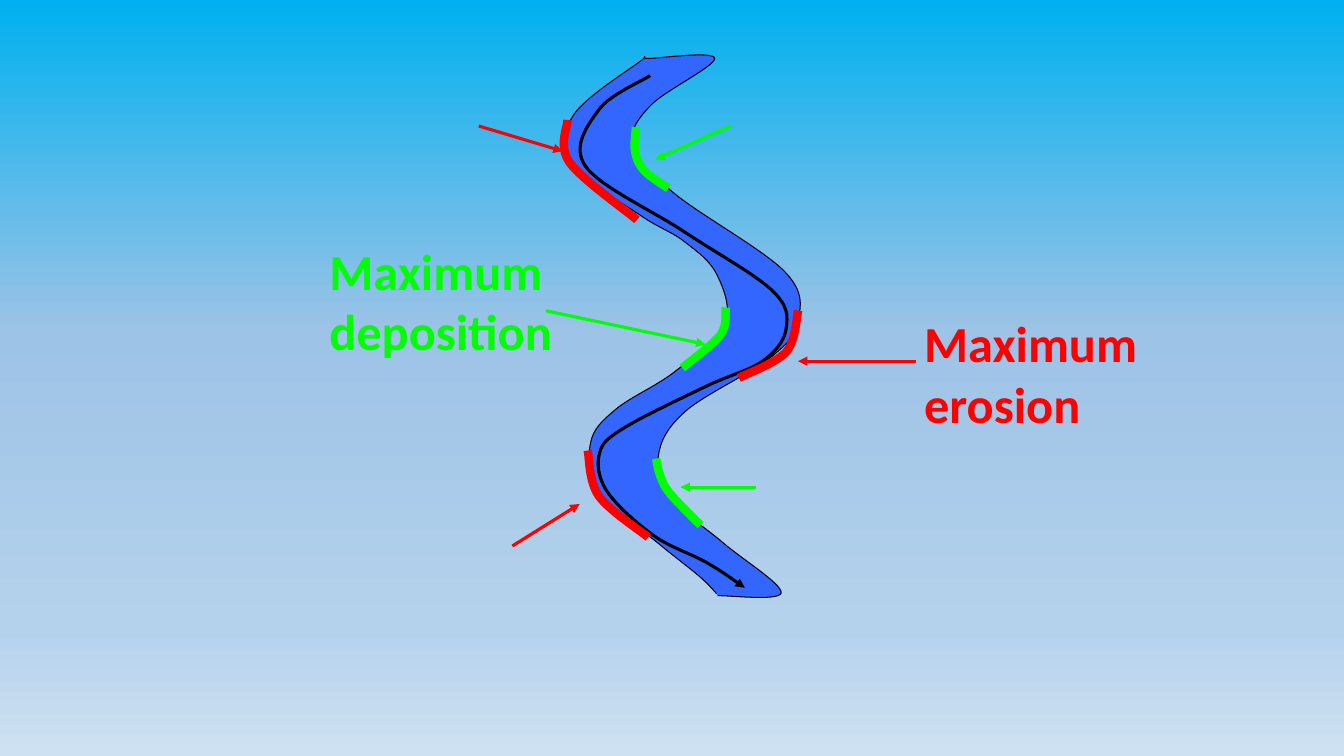
from copy import deepcopy

from lxml import etree
from pptx import Presentation
from pptx import util as u
from pptx.dml.color import RGBColor
from pptx.enum import shapes, text
from pptx.oxml import ns

# Content: all lengths in points
RED, GREEN, BLACK, WATER = "FF0000", "00FF00", "000000", "3366FF"
SKY = [(0, "00B0F0"), (0.44, "9DC3E6"), (0.83, "B5D2EC"), (1, "CEE1F2")]

RIVER = [
    (512.6, 425.5), (558, 423.4), (517, 388.1), (481.7, 357.8), (470.2, 326.2),
    (489.6, 293.8), (550.1, 255.6), (570.2, 229), (560.2, 193.7), (481.7, 138.2),
    (452.2, 104.4), (464.4, 75.6), (510.5, 41.8), (463.7, 41.8), (457.2, 43.9),
    (409.7, 82.1), (409.7, 118.1), (457.9, 154.1), (488.2, 172.1), (511.9, 195.8),
    (517.7, 231.8), (481.7, 265.7), (439.9, 292.3), (421.9, 316.1), (427.7, 352.1),
    (470.2, 388.1), (499.7, 411.8), (511.9, 424.1),
]
CURRENT = [
    (464.4, 54), (427.7, 78.5), (418.3, 118.8), (488.9, 165.6), (551.5, 207.4),
    (561.6, 234.7), (545, 257.8), (504.7, 275.8), (446.4, 305.3), (428.4, 323.3),
    (433.4, 350.6), (466.6, 382.3), (504.7, 401.8), (532.1, 419.8),
]
BANKS = [
    (RED, [(527.8, 270), (561.6, 251.3), (570.2, 221.8)]),
    (RED, [(463, 383.8), (427.7, 354.2), (419.8, 321.8)]),
    (RED, [(455, 157), (406.8, 115.9), (405.4, 85.7)]),
    (GREEN, [(487.4, 262.8), (514.8, 239), (518.4, 219.6)]),
    (GREEN, [(468.7, 327.6), (471.6, 339.8), (478.8, 352.8), (500.4, 375.1)]),
    (GREEN, [(454.3, 90.7), (453.6, 108), (460, 121.7), (477.4, 134.6)]),
]
LABELS = [
    (RED, "Maximum\nerosion", 653, 219.6),
    (GREEN, "Maximum\ndeposition", 228.2, 167.8),
]
POINTERS = [
    (RED, (654, 258), (570, 258)),
    (GREEN, (390, 222), (504, 246)),
    (RED, (366, 390), (414, 360)),
    (RED, (342, 90), (402, 108)),
    (GREEN, (522, 90), (468, 114)),
    (GREEN, (540, 348), (486, 348)),
]


def rgb(value):
    return RGBColor.from_string(value)


def with_handles(bends):
    """Two handles and an end for each piece; handles follow the neighbours."""
    padded = [bends[0], *bends, bends[-1]]
    for before, start, end, after in zip(padded, padded[1:], padded[2:], padded[3:]):
        yield tuple(s + (e - b) / 6 for b, s, e in zip(before, start, end))
        yield tuple(e - (a - s) / 6 for s, e, a in zip(start, end, after))
        yield end


def style_line(shape, color, width, arrow=False):
    shape.line.color.rgb = rgb(color)
    shape.line.width = u.Pt(width)
    if arrow:
        etree.SubElement(shape.line._get_or_add_ln(), ns.qn("a:tailEnd"), type="triangle")


def add_curve(bends, color, width, fill=None, arrow=False):
    builder = slide.shapes.build_freeform(*(u.Pt(value) for value in bends[0]))
    builder.add_line_segments(
        [(u.Pt(x), u.Pt(y)) for x, y in with_handles(bends)], close=False)
    curve = builder.convert_to_shape()

    # Every three straight segments become one Bezier piece
    segments = list(curve.element.iter(ns.qn("a:lnTo")))
    outline = segments[0].getparent()
    for first in range(0, len(segments), 3):
        piece = etree.SubElement(outline, ns.qn("a:cubicBezTo"))
        for segment in segments[first:first + 3]:
            piece.append(segment[0])
            outline.remove(segment)

    curve.shadow.inherit = False
    if fill:
        curve.fill.solid()
        curve.fill.fore_color.rgb = rgb(fill)
    else:
        curve.fill.background()
    style_line(curve, color, width, arrow)


prs = Presentation()
prs.slide_width, prs.slide_height = u.Pt(960), u.Pt(540)
slide = prs.slides.add_slide(prs.slide_layouts[6])

# Sky gradient, top to bottom
sky = slide.background.fill
sky.gradient()
sky.gradient_angle = 270
stop_list = slide.element.find(".//" + ns.qn("a:gsLst"))
while len(stop_list) < len(SKY):
    stop_list.append(deepcopy(stop_list[0]))
for stop, (position, color) in zip(sky.gradient_stops, SKY):
    stop.position = position
    stop.color.rgb = rgb(color)

# River, its fastest current and the marked banks
add_curve(RIVER, BLACK, 0.75, fill=WATER)
add_curve(CURRENT, BLACK, 2.25, arrow=True)
for color, bank in BANKS:
    add_curve(bank, color, 6)

# Labels
for color, wording, left, top in LABELS:
    label = slide.shapes.add_textbox(u.Pt(left), u.Pt(top), u.Pt(183.6), u.Pt(93.6))
    frame = label.text_frame
    frame.word_wrap = False
    frame.auto_size = text.MSO_AUTO_SIZE.SHAPE_TO_FIT_TEXT
    frame.text = wording
    for paragraph in frame.paragraphs:
        font = paragraph.runs[0].font
        font.name, font.size, font.bold = "Calibri", u.Pt(36), True
        font.color.rgb = rgb(color)

# Pointers to the banks
for color, start, end in POINTERS:
    pointer = slide.shapes.add_connector(
        shapes.MSO_CONNECTOR.STRAIGHT, *(u.Pt(value) for value in start + end))
    style_line(pointer, color, 2.25, arrow=True)
    etree.SubElement(pointer.line._get_or_add_ln().getparent(), ns.qn("a:effectLst"))

prs.save("out.pptx")
